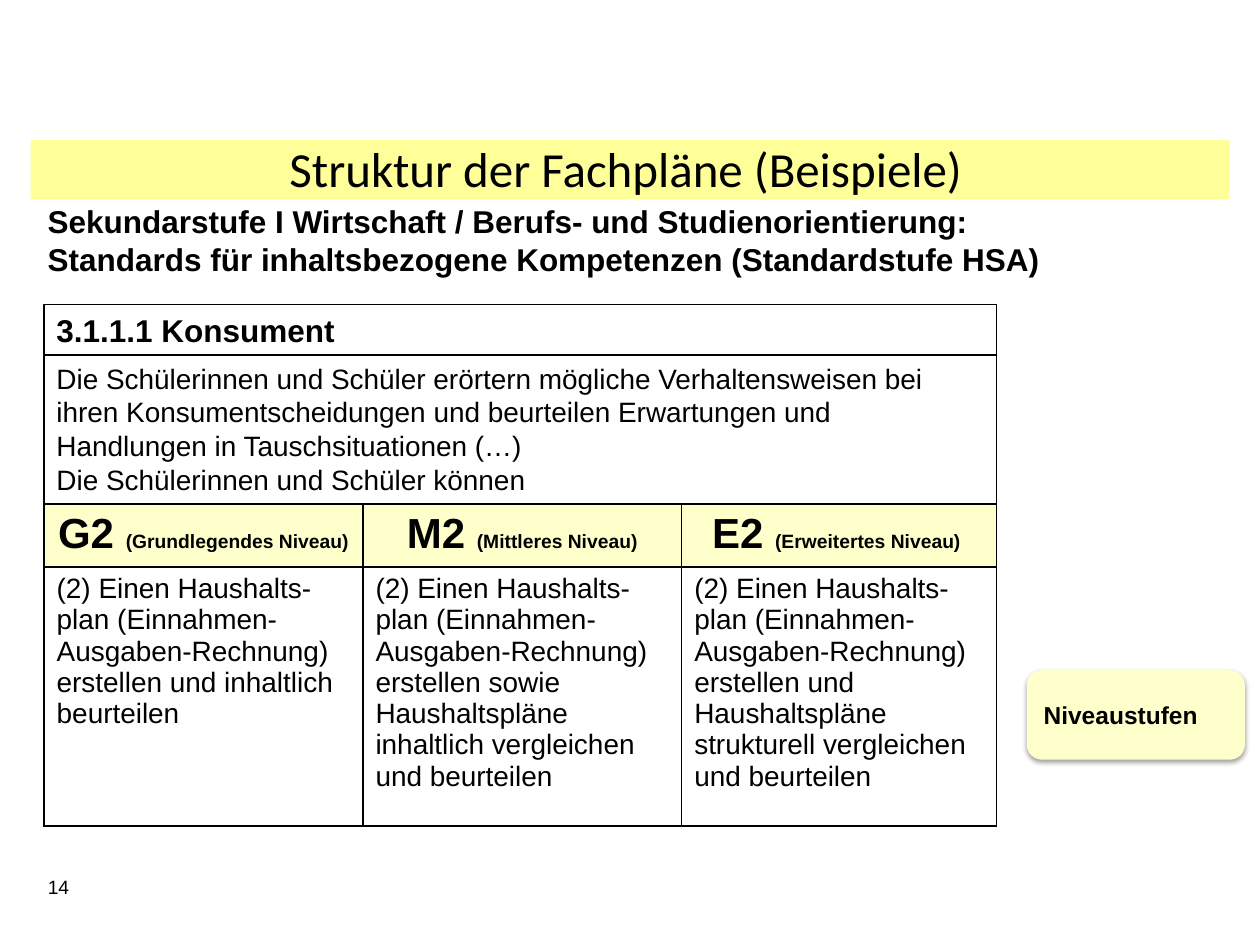
from lxml import etree
from pptx import Presentation
from pptx.dml.color import RGBColor
from pptx.enum.shapes import MSO_SHAPE
from pptx.enum.text import MSO_ANCHOR, PP_ALIGN
from pptx.oxml.ns import qn
from pptx.util import Pt

RECTANGLE = MSO_SHAPE.RECTANGLE
ROUNDED = MSO_SHAPE.ROUNDED_RECTANGLE
LEFT, CENTER = PP_ALIGN.LEFT, PP_ALIGN.CENTER
TOP, MIDDLE = MSO_ANCHOR.TOP, MSO_ANCHOR.MIDDLE

COLORS = {"text": "000000", "band": "FFFF99", "level": "FFFFCC", "cell": "FFFFFF"}
TABLE_LEFT, TABLE_WIDTH = 25.2, 544.3
COLUMN_WIDTHS = (182.2, 182.2, 179.9)
ROW_HEIGHTS = (36, 148)
LEVELS = [
    ("G2 ", "(Grundlegendes Niveau) ", "erstellen und inhaltlich beurteilen"),
    ("M2 ", "(Mittleres Niveau)",
     "erstellen sowie Haushaltspläne inhaltlich vergleichen und beurteilen"),
    ("E2 ", "(Erweitertes Niveau) ",
     "erstellen und Haushaltspläne strukturell vergleichen und beurteilen"),
]
TASK = "(2) Einen Haushalts-plan (Einnahmen-Ausgaben-Rechnung) "


def color(name):
    """Return the named colour."""
    return RGBColor.from_string(COLORS[name])


def style_font(font, size, bold=False, name="Arial"):
    """Set the face, size, weight and colour of a font."""
    font.name, font.size, font.bold = name, Pt(size), bold
    font.color.rgb = color("text")


def write(frame, lines, size, bold=False, name="Arial", align=LEFT, spacing=None):
    """Fill a text frame with one paragraph for each line."""
    frame.word_wrap = True
    for index, line in enumerate(lines):
        paragraph = frame.add_paragraph() if index else frame.paragraphs[0]
        paragraph.text = line
        paragraph.alignment = align
        if spacing:
            paragraph.line_spacing = Pt(spacing)
        style_font(paragraph.font, size, bold, name)


def add_text(slide, box, lines, size, **style):
    """Add a text box."""
    shape = slide.shapes.add_textbox(*map(Pt, box))
    write(shape.text_frame, lines, size, **style)


def add_panel(slide, kind, box, fill=None, line=None):
    """Add a preset shape with an optional fill and outline width."""
    shape = slide.shapes.add_shape(kind, *map(Pt, box))
    shape.shadow.inherit = False
    if fill:
        shape.fill.solid()
        shape.fill.fore_color.rgb = color(fill)
    else:
        shape.fill.background()
    if line is None:
        shape.line.fill.background()
    else:
        shape.line.width = Pt(line)
        shape.line.color.rgb = color("text")
    shape.text_frame.vertical_anchor = TOP
    return shape


def add_shadow(shape):
    """Give a shape a soft shadow below it."""
    effects = shape._element.spPr.find(qn("a:effectLst"))
    shadow = etree.SubElement(effects, qn("a:outerShdw"), blurRad=str(Pt(3.1)),
                              dist=str(Pt(1.6)), dir="5400000", rotWithShape="0")
    tint = etree.SubElement(shadow, qn("a:srgbClr"), val=COLORS["text"])
    etree.SubElement(tint, qn("a:alpha"), val="38000")


def style_cell(cell, fill):
    """Set the borders and fill of a table cell."""
    properties = cell._tc.get_or_add_tcPr()
    for side in ("lnL", "lnR", "lnT", "lnB"):
        border = etree.SubElement(properties, qn(f"a:{side}"), w=str(Pt(1)))
        solid = etree.SubElement(border, qn("a:solidFill"))
        etree.SubElement(solid, qn("a:srgbClr"), val=COLORS["text"])
    cell.fill.solid()
    cell.fill.fore_color.rgb = color(fill)


def add_level_table(slide):
    """Add the table that compares the three levels."""
    table = slide.shapes.add_table(
        len(ROW_HEIGHTS), len(LEVELS), Pt(TABLE_LEFT), Pt(288),
        Pt(TABLE_WIDTH), Pt(sum(ROW_HEIGHTS))).table
    table.first_row = table.horz_banding = False
    for row, height in zip(table.rows, ROW_HEIGHTS):
        row.height = Pt(height)
    for index, (code, label, task) in enumerate(LEVELS):
        table.columns[index].width = Pt(COLUMN_WIDTHS[index])
        heading, body = table.cell(0, index), table.cell(1, index)
        style_cell(heading, "level")
        style_cell(body, "cell")
        paragraph = heading.text_frame.paragraphs[0]
        paragraph.alignment = CENTER
        for text, size in ((code, 24), (label, 11)):
            run = paragraph.add_run()
            run.text = text
            style_font(run.font, size, bold=True)
        write(body.text_frame, [TASK + task], 16, spacing=17.85)


def main():
    """Build the slide and save it."""
    presentation = Presentation()
    presentation.slide_width, presentation.slide_height = Pt(720), Pt(540)
    slide = presentation.slides.add_slide(presentation.slide_layouts[6])

    add_panel(slide, RECTANGLE, (17.5, 80, 685, 34), fill="band")
    add_text(slide, (15, 75.6, 685, 41), ["Struktur der Fachpläne (Beispiele)"],
             28, name="Calibri", align=CENTER)
    add_text(slide, (20.2, 112.3, 702.7, 51.1), [
        "Sekundarstufe I Wirtschaft / Berufs- und Studienorientierung:",
        "Standards für inhaltsbezogene Kompetenzen (Standardstufe HSA)",
    ], 18, bold=True, spacing=21.4)

    topic = add_panel(slide, RECTANGLE, (TABLE_LEFT, 174.2, TABLE_WIDTH, 28.8), line=0)
    write(topic.text_frame, ["3.1.1.1 Konsument"], 18, bold=True, spacing=21.4)
    intro = add_panel(slide, RECTANGLE, (TABLE_LEFT, 203, TABLE_WIDTH, 87.1), line=0.75)
    write(intro.text_frame, [
        "Die Schülerinnen und Schüler erörtern mögliche Verhaltensweisen bei ihren "
        "Konsumentscheidungen und beurteilen Erwartungen und Handlungen in "
        "Tauschsituationen (…)",
        "Die Schülerinnen und Schüler können",
    ], 16, spacing=19.2)
    add_level_table(slide)

    badge = add_panel(slide, ROUNDED, (586.8, 383, 124.6, 51.1), fill="level")
    add_shadow(badge)
    badge.text_frame.vertical_anchor = MIDDLE
    write(badge.text_frame, ["Niveaustufen"], 14, bold=True)
    add_text(slide, (20.2, 496.8, 39.6, 20.9), ["14"], 11)

    presentation.save("out.pptx")


if __name__ == "__main__":
    main()
